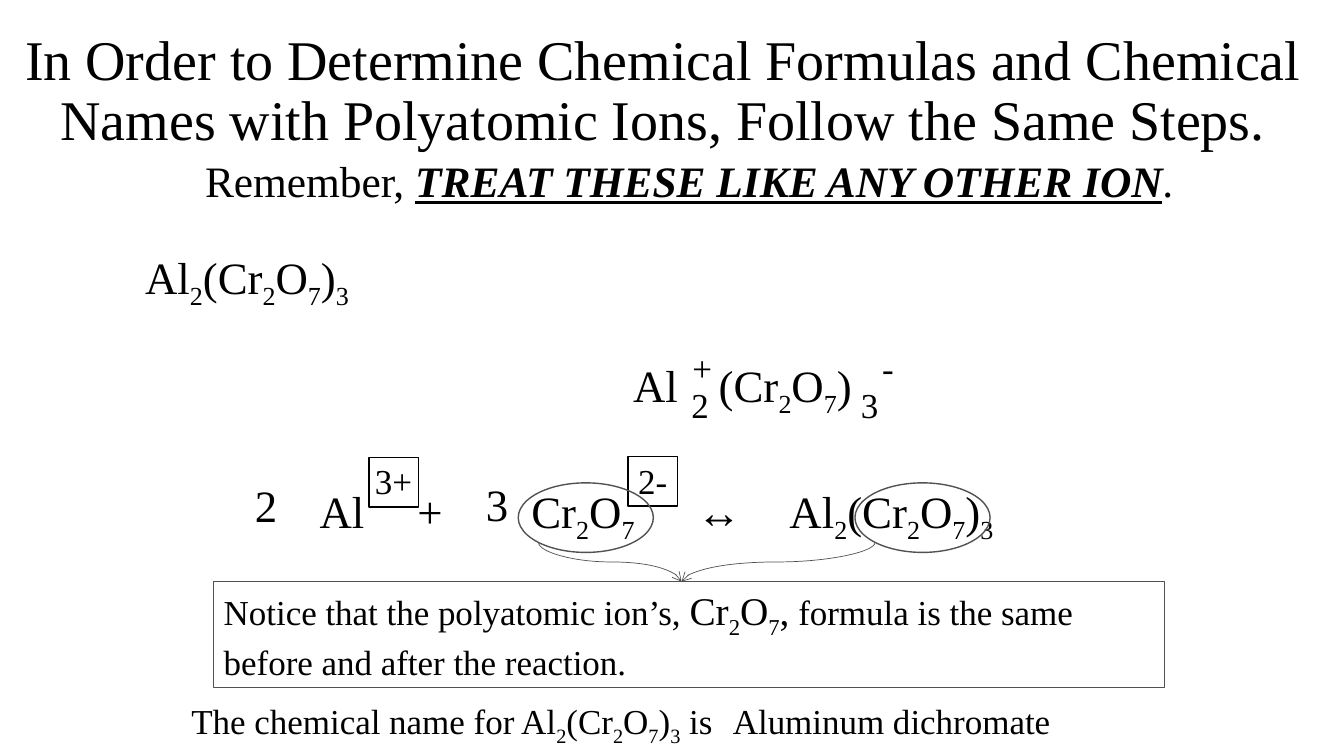
from dataclasses import dataclass

from lxml.etree import SubElement
from pptx import Presentation
from pptx.dml.color import RGBColor
from pptx.enum.shapes import MSO_CONNECTOR as Link, MSO_SHAPE as Preset
from pptx.enum.text import MSO_ANCHOR as Anchor, MSO_AUTO_SIZE as AutoSize, PP_ALIGN as Align
from pptx.oxml.ns import qn
from pptx.slide import Slide
from pptx.text.text import TextFrame, _Paragraph as Paragraph
from pptx.util import Inches, Pt

COLORS = {"ink": "000000", "outline": "525252"}
FONT = "Times New Roman"
DICHROMATE = "Cr_2O_7"
COMPOUND = f"Al_2({DICHROMATE})_3"


@dataclass(frozen=True)
class Piece:
    text: str
    size: float
    underline: bool = False
    strong: bool = False


@dataclass(frozen=True)
class Label:
    left: float
    top: float
    width: float
    height: float
    pieces: tuple[Piece, ...]
    wrap: bool = False
    align: Align = Align.LEFT
    inset: float = 0.1
    tabs: tuple[float, ...] = ()


@dataclass(frozen=True)
class Outline:
    preset: Preset
    left: float
    top: float
    width: float
    height: float
    color: str


@dataclass(frozen=True)
class Arrow:
    start: tuple[float, float]
    end: tuple[float, float]


def small(left: float, top: float, width: float, text: str) -> Label:
    return Label(left, top, width, 0.52, (Piece(text, 25),))


def large(left: float, top: float, width: float, text: str) -> Label:
    return Label(left, top, width, 0.64, (Piece(text, 32),))


LABELS = (
    large(1.34, 2.43, 2.32, COMPOUND),
    large(7.03, 3.5, 1.57, f"({DICHROMATE})"),
    large(6.18, 3.5, 0.65, "Al"),
    small(8.44, 3.76, 0.38, "3"),
    small(6.76, 3.76, 0.38, "2"),
    small(6.77, 3.39, 0.4, "+"),
    small(8.65, 3.39, 0.32, "-"),
    small(3.62, 4.51, 0.58, "3+"),
    small(6.23, 4.51, 0.49, "2-"),
    Label(2.12, 4.75, 9.29, 0.64, (
        Piece("\t", 32, underline=True),
        Piece("\tAl\t+\t", 32),
        Piece("\t", 32, underline=True),
        Piece(f"{DICHROMATE}\t↔\t{COMPOUND}", 32),
    ), wrap=True, inset=0.15, tabs=(0.8, 0.9, 1.87, 2.22, 3.0, 4.64, 5.56)),
    large(2.43, 4.69, 0.43, "2"),
    large(4.72, 4.68, 0.43, "3"),
    Label(2.12, 5.77, 9.29, 0.99, (
        Piece("Notice that the polyatomic ion’s, ", 25),
        Piece(f"{DICHROMATE},", 28),
        Piece(" formula is the same before and after the reaction.", 25),
    ), wrap=True),
    small(1.8, 6.89, 5.67, f"The chemical name for {COMPOUND} is"),
    small(7.17, 6.89, 3.39, "Aluminum dichromate"),
    Label(0.17, 1.48, 13.33, 0.62, (
        Piece("Remember, ", 31),
        Piece("TREAT THESE LIKE ANY OTHER ION", 31, underline=True, strong=True),
        Piece(".", 31),
    ), wrap=True, align=Align.CENTER),
)

OUTLINES = (
    Outline(Preset.RECTANGLE, 3.66, 4.54, 0.49, 0.49, "ink"),
    Outline(Preset.RECTANGLE, 6.23, 4.53, 0.49, 0.49, "ink"),
    Outline(Preset.RECTANGLE, 2.12, 5.77, 9.43, 1.05, "outline"),
    Outline(Preset.OVAL, 5.14, 4.79, 1.34, 0.69, "outline"),
    Outline(Preset.OVAL, 8.48, 4.79, 1.34, 0.69, "outline"),
)

NOTICE_TOP = (6.76, 5.77)
ARROWS = (Arrow((5.34, 5.38), NOTICE_TOP), Arrow((8.68, 5.38), NOTICE_TOP))


def rgb(name: str) -> RGBColor:
    return RGBColor.from_string(COLORS[name])


def add_run(paragraph: Paragraph, text: str, piece: Piece, subscript: bool = False) -> None:
    run = paragraph.add_run()
    run.text = text
    run.font.name = FONT
    run.font.size = Pt(piece.size)
    run.font.color.rgb = rgb("ink")
    if piece.underline:
        run.font.underline = True
    if piece.strong:
        run.font.bold = run.font.italic = True
    if subscript:
        run._r.get_or_add_rPr().set("baseline", "-25000")


def add_piece(paragraph: Paragraph, piece: Piece) -> None:
    plain, *rest = piece.text.split("_")
    if plain:
        add_run(paragraph, plain, piece)
    for part in rest:
        add_run(paragraph, part[0], piece, subscript=True)
        if part[1:]:
            add_run(paragraph, part[1:], piece)


def add_tabs(paragraph: Paragraph, stops: tuple[float, ...]) -> None:
    tab_list = SubElement(paragraph._p.get_or_add_pPr(), qn("a:tabLst"))
    for stop in stops:
        SubElement(tab_list, qn("a:tab"), pos=str(Inches(stop)), algn="l")


def draw_title(slide: Slide) -> None:
    title = slide.shapes.title
    title.left, title.top = Inches(0), Inches(0.09)
    title.width, title.height = Inches(13.15), Inches(1.65)
    frame: TextFrame = title.text_frame
    frame.word_wrap = True
    frame.auto_size = AutoSize.NONE
    frame.vertical_anchor = Anchor.MIDDLE
    paragraph = frame.paragraphs[0]
    paragraph.alignment = Align.CENTER
    paragraph.line_spacing = 0.9
    add_piece(paragraph, Piece(
        "In Order to Determine Chemical Formulas and Chemical Names "
        "with Polyatomic Ions, Follow the Same Steps.", 40))


def draw_label(slide: Slide, label: Label) -> None:
    box = slide.shapes.add_textbox(
        Inches(label.left), Inches(label.top), Inches(label.width), Inches(label.height))
    frame = box.text_frame
    frame.word_wrap = label.wrap
    frame.auto_size = AutoSize.SHAPE_TO_FIT_TEXT
    frame.margin_left = Inches(label.inset)
    paragraph = frame.paragraphs[0]
    paragraph.alignment = label.align
    if label.tabs:
        add_tabs(paragraph, label.tabs)
    for piece in label.pieces:
        add_piece(paragraph, piece)


def draw_outline(slide: Slide, outline: Outline) -> None:
    shape = slide.shapes.add_shape(
        outline.preset, Inches(outline.left), Inches(outline.top),
        Inches(outline.width), Inches(outline.height))
    shape.shadow.inherit = False
    shape.fill.background()
    shape.line.color.rgb = rgb(outline.color)
    shape.line.width = Pt(1)


def draw_arrow(slide: Slide, arrow: Arrow) -> None:
    (x1, y1), (x2, y2) = arrow.start, arrow.end
    side = 1 if x2 > x1 else -1
    mid_x, mid_y = (x1 + x2) / 2, (y1 + y2) / 2
    across, down = side * (y2 - y1) / 2, abs(x2 - x1) / 2
    curve = slide.shapes.add_connector(
        Link.CURVE, Inches(mid_x + across), Inches(mid_y - down),
        Inches(mid_x - across), Inches(mid_y + down))
    curve.line.color.rgb = rgb("outline")
    curve.line.width = Pt(0.5)
    properties = curve._element.spPr
    quarter_turns = 3 if side > 0 else 1
    properties.find(qn("a:xfrm")).set("rot", str(quarter_turns * 90 * 60000))
    SubElement(properties.find(qn("a:ln")), qn("a:tailEnd"), type="arrow")
    SubElement(properties, qn("a:effectLst"))


def main() -> None:
    deck = Presentation()
    deck.slide_width, deck.slide_height = Inches(13.33), Inches(7.5)
    slide = deck.slides.add_slide(deck.slide_layouts[5])
    draw_title(slide)
    for label in LABELS:
        draw_label(slide, label)
    for outline in OUTLINES:
        draw_outline(slide, outline)
    for arrow in ARROWS:
        draw_arrow(slide, arrow)
    deck.save("out.pptx")


if __name__ == "__main__":
    main()
